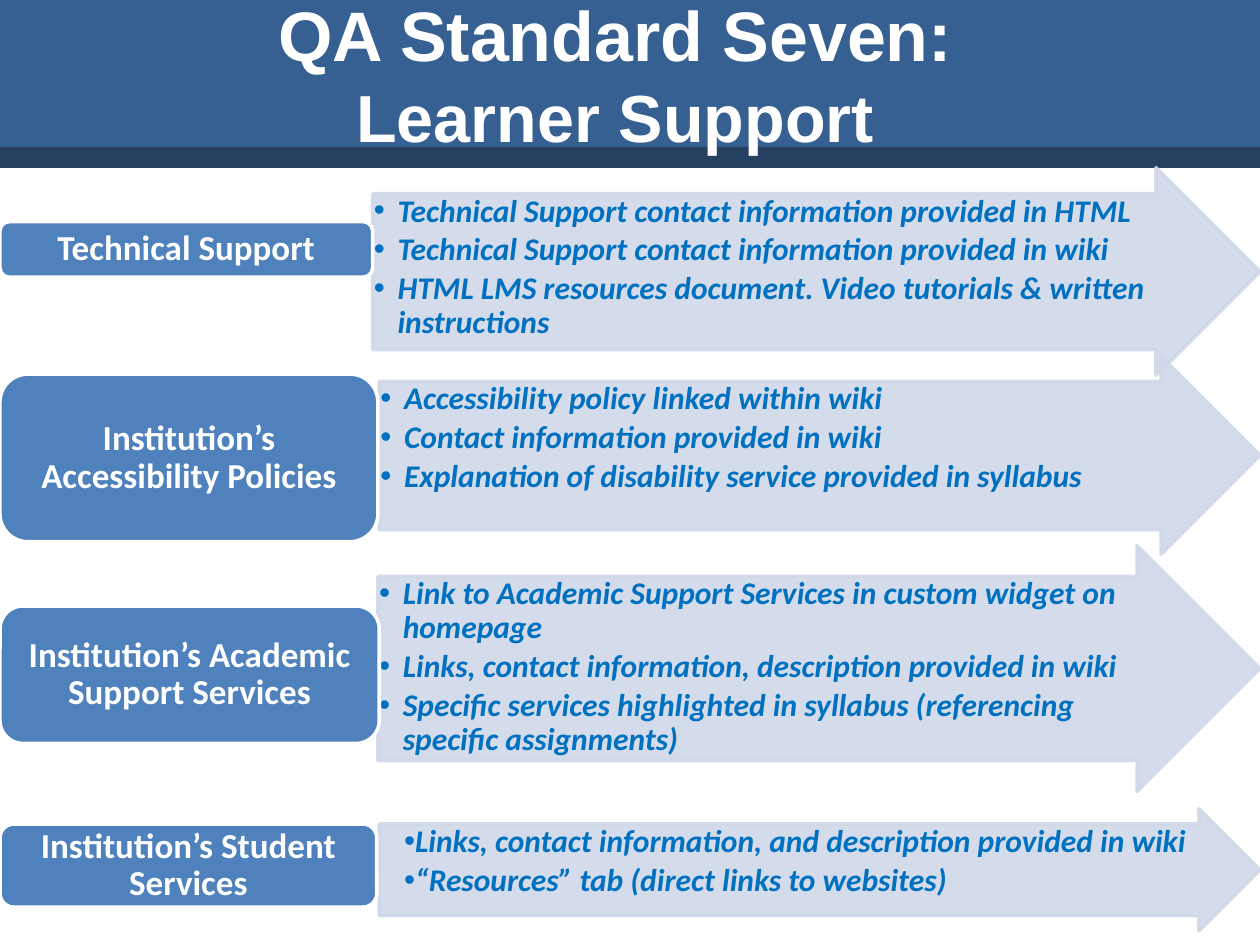
from lxml import etree
from pptx import Presentation
from pptx.dml.color import RGBColor
from pptx.enum.shapes import MSO_SHAPE
from pptx.enum.text import MSO_ANCHOR, MSO_AUTO_SIZE, PP_ALIGN
from pptx.oxml.ns import qn
from pptx.util import Pt

RECT = MSO_SHAPE.RECTANGLE
ROUND = MSO_SHAPE.ROUNDED_RECTANGLE
ARROW = MSO_SHAPE.RIGHT_ARROW
TOP, MIDDLE = MSO_ANCHOR.TOP, MSO_ANCHOR.MIDDLE
LEFT, CENTER = PP_ALIGN.LEFT, PP_ALIGN.CENTER
NO_FIT = MSO_AUTO_SIZE.NONE

WIDE, HIGH = 720, 540
WHITE, PALE, BLUE = "FFFFFF", "D0D8E8", "4F81BD"

# Label text, label box, arrow box, bullet hang, bullet lines
ROWS = [
    ("Technical Support", (0, 126.7, 213, 31.7), (213, 95.8, 507, 118.8), 13.5,
     ["Technical Support contact information provided in HTML",
      "Technical Support contact information provided in wiki",
      "HTML LMS resources document. Video tutorials & written instructions"]),
    ("Institution’s Accessibility Policies",
     (0, 213.8, 216, 95.8), (216.7, 203.8, 503.3, 113), 13.5,
     ["Accessibility policy linked within wiki",
      "Contact information provided in wiki",
      "Explanation of disability service provided in syllabus"]),
    ("Institution’s Academic Support Services",
     (0, 346.3, 216.7, 78.5), (216, 311.8, 504, 140.4), 13.5,
     ["Link to Academic Support Services in custom widget on homepage",
      "Links, contact information, description provided in wiki",
      "Specific services highlighted in syllabus (referencing specific assignments)"]),
    ("Institution’s Student Services",
     (0, 470.9, 215.3, 47.5), (216.7, 462.2, 503.3, 69.8), 0,
     ["Links, contact information, and description provided in wiki",
      "“Resources” tab (direct links to websites)"]),
]


def color(code):
    return RGBColor.from_string(code)


def add_box(slide, kind, box, fill, line=None):
    shape = slide.shapes.add_shape(kind, *map(Pt, box))
    shape.shadow.inherit = False
    shape.fill.solid()
    shape.fill.fore_color.rgb = color(fill)
    if line:
        shape.line.color.rgb = color(line)
        shape.line.width = Pt(2)
    else:
        shape.line.fill.background()
    return shape


def set_frame(shape, anchor, side, edge):
    frame = shape.text_frame
    frame.word_wrap = True
    frame.auto_size = NO_FIT
    frame.vertical_anchor = anchor
    frame.margin_left = frame.margin_right = Pt(side)
    frame.margin_top = frame.margin_bottom = Pt(edge)
    return frame


def set_font(font, name, size, code, italic=False):
    font.name, font.size = name, Pt(size)
    font.bold, font.italic = True, italic
    font.color.rgb = color(code)


def fade(shape, share):
    for tint in shape._element.spPr.iter(qn("a:srgbClr")):
        etree.SubElement(tint, qn("a:alpha"), val=str(share * 1000))


def add_bullet(para, hang):
    props = para._p.get_or_add_pPr()
    props.set("marL", str(Pt(13.5)))
    props.set("indent", str(-Pt(hang)))
    etree.SubElement(props, qn("a:buFont"), typeface="Arial")
    etree.SubElement(props, qn("a:buChar"), char="•")


def add_header(slide, box):
    left, top, width, height = box
    add_box(slide, RECT, box, "376092")
    add_box(slide, RECT, (left, top + height - 12, width, 12), "254061")

    # Title, raised above the two bands
    title = slide.shapes.title
    title.left, title.top, title.width, title.height = map(
        Pt, (left, top, width, height - 12))
    slide.shapes._spTree.append(title._element)
    frame = set_frame(title, MIDDLE, 7.2, 3.6)
    frame.margin_right = Pt(24)
    para = frame.paragraphs[0]
    para.alignment = CENTER
    for text, size in (("QA Standard Seven:", 40), ("Learner Support", 38)):
        if para.runs:
            para.add_line_break()
        run = para.add_run()
        run.text = text
        set_font(run.font, "Arial", size, WHITE)


def add_arrow(slide, box, hang, lines):
    arrow = add_box(slide, ARROW, box, PALE, PALE)
    arrow.adjustments[0] = 0.75
    arrow.adjustments[1] = 0.5
    fade(arrow, 90)
    frame = set_frame(arrow, TOP, 0.7, 0.7)
    for i, text in enumerate(lines):
        para = frame.add_paragraph() if i else frame.paragraphs[0]
        para.text = text
        para.alignment = LEFT
        para.line_spacing = 0.9
        para.space_after = Pt(2.7)
        add_bullet(para, hang)
        set_font(para.font, "Calibri", 18, "0070C0", italic=True)


def add_label(slide, box, text):
    label = add_box(slide, ROUND, box, BLUE, WHITE)
    para = set_frame(label, MIDDLE, 6, 3).paragraphs[0]
    para.text = text
    para.alignment = CENTER
    para.line_spacing = 0.9
    set_font(para.font, "Calibri", 20, WHITE)


def main():
    deck = Presentation()
    deck.slide_width, deck.slide_height = Pt(WIDE), Pt(HIGH)
    slide = deck.slides.add_slide(deck.slide_layouts[5])
    add_header(slide, (0, 0, WIDE, 96))
    for name, label, arrow, hang, lines in ROWS:
        add_arrow(slide, arrow, hang, lines)
        add_label(slide, label, name)
    deck.save("out.pptx")


if __name__ == "__main__":
    main()
